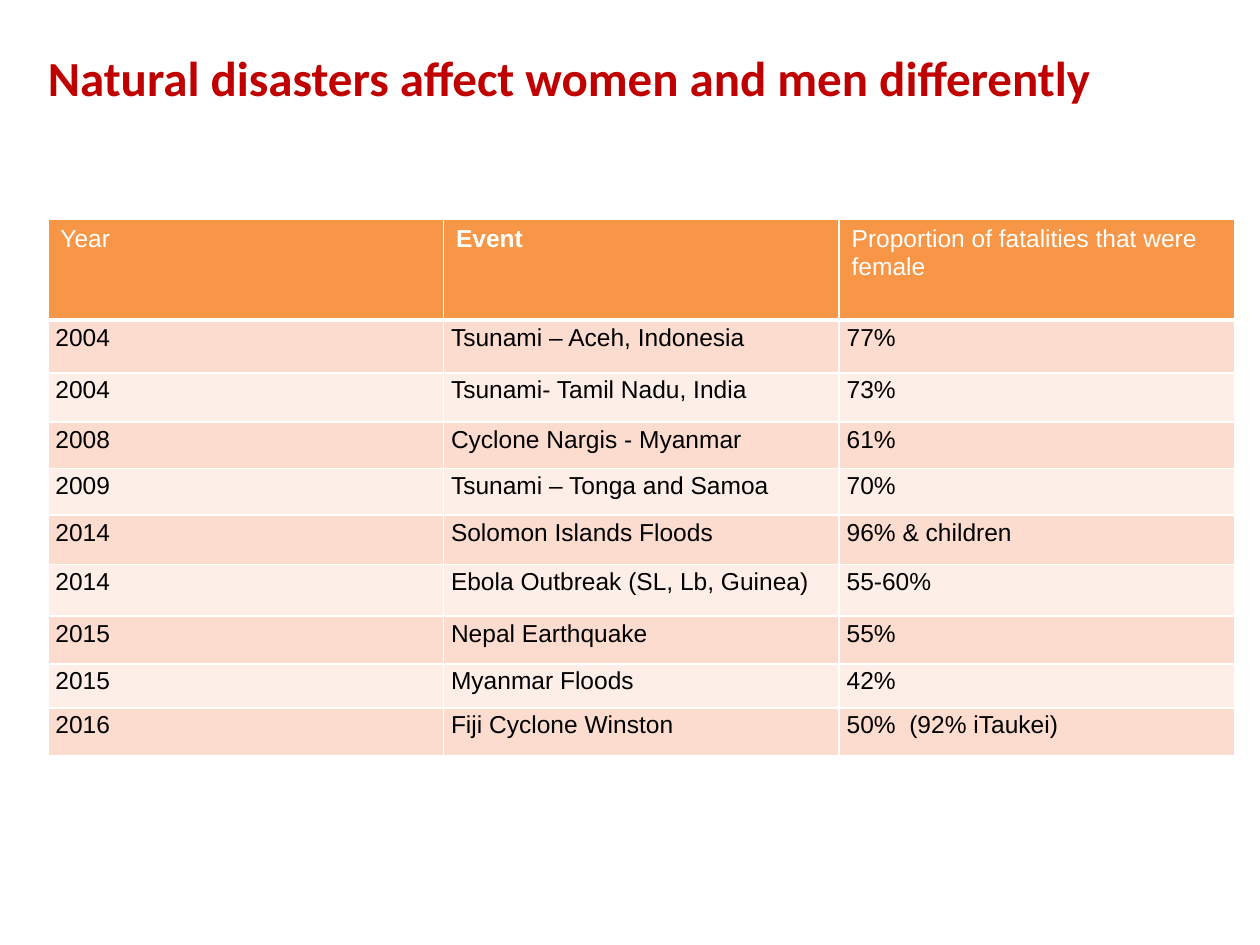
from lxml.etree import SubElement
from pptx import Presentation
from pptx.dml.color import RGBColor
from pptx.enum.text import MSO_ANCHOR, MSO_AUTO_SIZE, PP_ALIGN
from pptx.oxml.ns import qn
from pptx.util import Inches, Pt

COLORS = {
    "title": "C00000",
    "header": "F79646",
    "odd_row": "FCDCCE",
    "even_row": "FDEEE8",
    "white": "FFFFFF",
    "black": "000000",
}
HEADINGS = ["Year", "Event", "Proportion of fatalities that were female"]
DISASTERS = [
    ("2004", "Tsunami – Aceh, Indonesia", "77%"),
    ("2004", "Tsunami- Tamil Nadu, India", "73%"),
    ("2008", "Cyclone Nargis - Myanmar", "61%"),
    ("2009", "Tsunami – Tonga and Samoa", "70%"),
    ("2014", "Solomon Islands Floods", "96% & children"),
    ("2014", "Ebola Outbreak (SL, Lb, Guinea)", "55-60%"),
    ("2015", "Nepal Earthquake", "55%"),
    ("2015", "Myanmar Floods", "42%"),
    ("2016", "Fiji Cyclone Winston", "50%  (92% iTaukei)"),
]
ROW_HEIGHTS = [0.8, 0.42, 0.39, 0.37, 0.37, 0.39, 0.41, 0.38, 0.35, 0.38]


def rgb(name):
    return RGBColor.from_string(COLORS[name])


def add_text(frame, text, font_name, size, color, bold):
    paragraph = frame.paragraphs[0]
    paragraph.alignment = PP_ALIGN.LEFT
    run = paragraph.add_run()
    run.text = text
    run.font.name = font_name
    run.font.size = Pt(size)
    run.font.bold = bold
    run.font.color.rgb = rgb(color)


def set_borders(cell, top, bottom):
    properties = cell._tc.get_or_add_tcPr()
    for side, width in (("L", 1), ("R", 1), ("T", top), ("B", bottom)):
        line = SubElement(properties, qn(f"a:ln{side}"), w=str(Pt(width)))
        fill = SubElement(line, qn("a:solidFill"))
        SubElement(fill, qn("a:srgbClr"), val=COLORS["white"])


def place_title(slide, left, top, width, height):
    title = slide.shapes.title
    title.left, title.top, title.width, title.height = left, top, width, height
    frame = title.text_frame
    frame.margin_left = frame.margin_right = 0
    frame.margin_top = frame.margin_bottom = 0
    frame.vertical_anchor = MSO_ANCHOR.TOP
    frame.auto_size = MSO_AUTO_SIZE.NONE
    frame.word_wrap = True
    add_text(frame, "Natural disasters affect women and men differently",
             "Calibri", 28, "title", True)


def place_fatalities(slide, left, top, width, height):
    records = [HEADINGS, *DISASTERS]
    fatalities = slide.shapes.add_table(
        len(records), len(HEADINGS), left, top, width, height).table
    for row, row_height in zip(fatalities.rows, ROW_HEIGHTS):
        row.height = Inches(row_height)
    for row_index, record in enumerate(records):
        is_header = row_index == 0
        if is_header:
            background = "header"
        else:
            background = "odd_row" if row_index % 2 else "even_row"
        for column_index, text in enumerate(record):
            cell = fatalities.cell(row_index, column_index)
            cell.margin_left = cell.margin_right = Inches(0.1 if is_header else 0.06)
            cell.margin_top = cell.margin_bottom = Inches(0.05 if is_header else 0.03)
            set_borders(cell, 3 if row_index == 1 else 1, 3 if is_header else 1)
            cell.fill.solid()
            cell.fill.fore_color.rgb = rgb(background)
            add_text(cell.text_frame, text, "Arial", 14,
                     "white" if is_header else "black",
                     is_header and text == "Event")


def main():
    presentation = Presentation()
    presentation.slide_width = Inches(10)
    presentation.slide_height = Inches(7.5)
    slide = presentation.slides.add_slide(presentation.slide_layouts[5])
    place_title(slide, Inches(0.38), Inches(0.38), Inches(9.15), Inches(1.36))
    place_fatalities(slide, Inches(0.38), Inches(1.74), Inches(9.42),
                     Inches(sum(ROW_HEIGHTS)))
    presentation.save("out.pptx")


if __name__ == "__main__":
    main()
